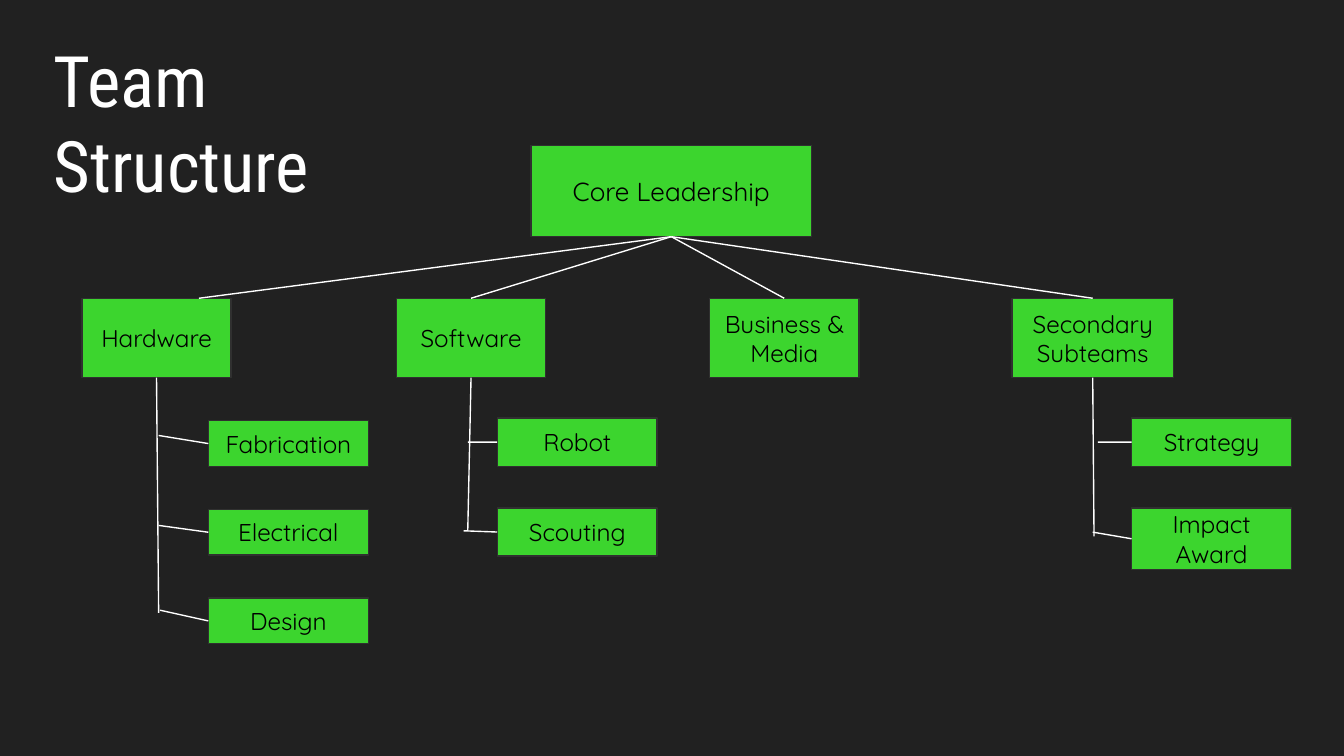
from lxml import etree
from pptx import Presentation
from pptx.dml.color import RGBColor
from pptx.enum.shapes import MSO_CONNECTOR, MSO_SHAPE
from pptx.enum.text import MSO_ANCHOR, PP_ALIGN
from pptx.oxml.ns import qn
from pptx.util import Pt

RECT, STRAIGHT = MSO_SHAPE.RECTANGLE, MSO_CONNECTOR.STRAIGHT
TOP, MIDDLE = MSO_ANCHOR.TOP, MSO_ANCHOR.MIDDLE
LEFT, CENTER = PP_ALIGN.LEFT, PP_ALIGN.CENTER
SIDE_TOP, SIDE_LEFT, SIDE_BOTTOM = 0, 1, 2

# Content: all lengths in points
TITLE = "Team Structure"
ROOT = "Core Leadership"
# "link" is where the root's line lands if not at the middle of the top side;
# each member is (name, height, start of its branch)
TEAMS = [
    dict(name="Hardware", x=43.9, w=79.9, link=(106.6, 159.8),
         trunk_end=(85, 328.3), member_x=111.6, member_y=225.4, step=47.5,
         members=[("Fabrication", 24.5, (85, 233.3)),
                  ("Electrical", 24.5, (85, 281.5)),
                  ("Design", 24.5, (85.7, 326.9))]),
    dict(name="Software", x=212.4, w=79.9,
         trunk_end=(250.6, 284.4), member_x=266.4, member_y=223.9, step=48.2,
         members=[("Robot", 25.9, (250.6, 236.9)),
                  ("Scouting", 25.9, (248.4, 284.4))]),
    dict(name="Business & Media", x=380.2, w=79.9, members=[]),
    dict(name="Secondary\nSubteams", x=542.2, w=86.4,
         trunk_end=(586.1, 287.3), member_x=606.2, member_y=223.9, step=48.2,
         members=[("Strategy", 25.9, (588.2, 236.9)),
                  ("Impact Award", 33.1, (585.4, 285.1))]),
]
TEAM_Y, TEAM_H, MEMBER_W = 159.8, 42.5, 85.7


def color(hex_text):
    return RGBColor.from_string(hex_text)


def write(sp, text, size=13, font="Quicksand", fill="000000",
          align=CENTER, anchor=MIDDLE):
    tf = sp.text_frame
    tf.word_wrap = True
    tf.vertical_anchor = anchor
    tf.margin_left = tf.margin_right = tf.margin_top = tf.margin_bottom = Pt(7.2)
    tf.text = text
    for p in tf.paragraphs:
        p.alignment = align
        for r in p.runs:
            r.font.size, r.font.name = Pt(size), font
            r.font.color.rgb = color(fill)


def box(text, x, y, w, h, **fmt):
    sp = s.shapes.add_shape(RECT, Pt(x), Pt(y), Pt(w), Pt(h))
    sp.shadow.inherit = False
    sp.fill.solid()
    sp.fill.fore_color.rgb = color("3CD52E")
    sp.line.color.rgb = color("303030")
    sp.line.width = Pt(0.75)
    write(sp, text, **fmt)
    return sp


def connect(start, end):
    """Each end is a point (x, y) or a joint (shape, side)."""
    joined = [not isinstance(e[0], (int, float)) for e in (start, end)]
    points = [(0, 0) if j else e for j, e in zip(joined, (start, end))]
    line = s.shapes.add_connector(STRAIGHT, *[Pt(v) for pt in points for v in pt])
    if joined[0]:
        line.begin_connect(*start)
    if joined[1]:
        line.end_connect(*end)
    line.line.color.rgb = color("FFFFFF")
    line.line.width = Pt(0.75)
    etree.SubElement(line.element.spPr, qn("a:effectLst"))


prs = Presentation()
prs.slide_width, prs.slide_height = Pt(720), Pt(405)
s = prs.slides.add_slide(prs.slide_layouts[6])
s.background.fill.solid()
s.background.fill.fore_color.rgb = color("212121")

# Title
title = s.shapes.add_textbox(Pt(21.6), Pt(12.2), Pt(239), Pt(60.5))
write(title, TITLE, size=38, font="Roboto Condensed", fill="FFFFFF",
      align=LEFT, anchor=TOP)

# Organisation chart
root = box(ROOT, 284.4, 77.8, 150.5, 49, size=14)
for t in TEAMS:
    team = box(t["name"], t["x"], TEAM_Y, t["w"], TEAM_H)
    connect((root, SIDE_BOTTOM), t.get("link", (team, SIDE_TOP)))
    if t["members"]:
        connect((team, SIDE_BOTTOM), t["trunk_end"])
    for i, (name, h, branch) in enumerate(t["members"]):
        member = box(name, t["member_x"], t["member_y"] + i * t["step"],
                     MEMBER_W, h)
        connect(branch, (member, SIDE_LEFT))

prs.save("out.pptx")
